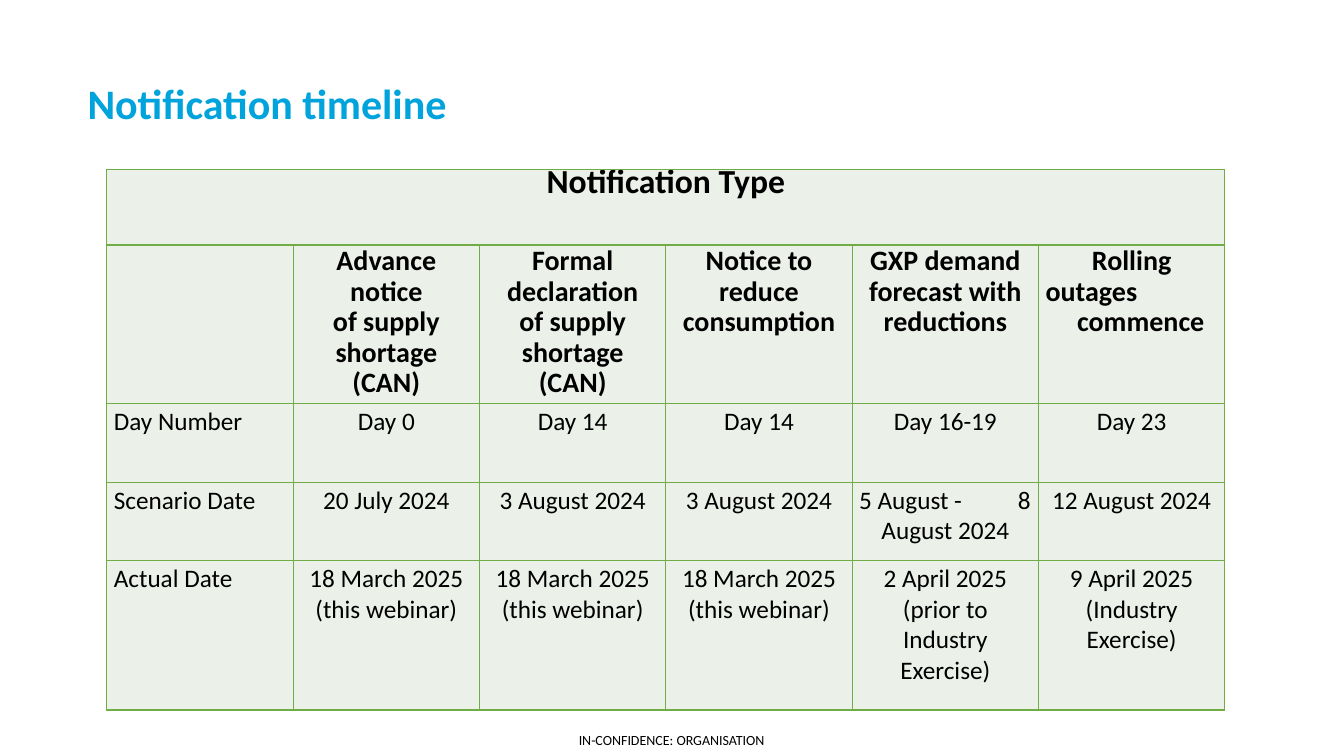
import lxml.etree
import pptx
import pptx.dml.color
import pptx.enum.text
import pptx.oxml.ns
import pptx.util

ALIGN = pptx.enum.text.PP_ALIGN
ANCHOR = pptx.enum.text.MSO_ANCHOR
WIDTH, HEIGHT = 13.33, 7.5
BLACK, BLUE, GREEN, PALE = "000000", "00A3DB", "70AD47", "EBF1E9"
SPLIT_DATE, SPLIT_HEADING = (3, 4), (1, 5)

ROWS = [
    ["Notification Type", "", "", "", "", ""],
    ["", "Advance notice\nof supply shortage (CAN)",
     "Formal declaration\nof supply shortage (CAN)",
     "Notice to reduce consumption", "GXP demand forecast with reductions",
     "Rolling\noutages\ncommence"],
    ["Day Number", "Day 0", "Day 14", "Day 14", "Day 16-19", "Day 23"],
    ["Scenario Date", "20 July 2024", "3 August 2024", "3 August 2024",
     "5 August -\t8\nAugust 2024", "12 August 2024"],
    ["Actual Date"] + ["18 March 2025\n(this webinar)"] * 3
    + ["2 April 2025 (prior to Industry Exercise)",
       "9 April 2025\n(Industry Exercise)"],
]
ROW_HEIGHTS = [0.75, 1.48, 0.78, 0.78, 1.48]
ROW_SIZES = [24, 20, 18, 18, 18]


def colour(value):
    return pptx.dml.color.RGBColor.from_string(value)


class SlideBuilder:
    """Hold the deck style and add elements to the current slide."""

    font_name = "Calibri"

    def __init__(self):
        self.deck = pptx.Presentation()
        self.deck.slide_width = pptx.util.Inches(WIDTH)
        self.deck.slide_height = pptx.util.Inches(HEIGHT)
        self.slide = self.deck.slides.add_slide(self.deck.slide_layouts[6])

    def place(self, left, top, width, height):
        across, down = self.deck.slide_width, self.deck.slide_height
        return (round(left * across), round(top * down),
                round(width * across), round(height * down))

    def style(self, para, size, shade, bold):
        para.font.name = self.font_name
        para.font.size = pptx.util.Pt(size)
        para.font.color.rgb = colour(shade)
        para.font.bold = bold

    def text(self, shares, words, size, shade, bold=False, wrap=True,
             inset=(0.1, 0.05), anchor=ANCHOR.TOP, spacing=1.0):
        box = self.slide.shapes.add_textbox(*self.place(*shares))
        frame = box.text_frame
        frame.word_wrap = wrap
        frame.vertical_anchor = anchor
        frame.margin_left = frame.margin_right = pptx.util.Inches(inset[0])
        frame.margin_top = frame.margin_bottom = pptx.util.Inches(inset[1])
        frame.text = words
        para = frame.paragraphs[0]
        para.line_spacing = spacing
        self.style(para, size, shade, bold)

    def border(self, cell):
        properties = cell._tc.get_or_add_tcPr()
        for index, side in enumerate(("lnL", "lnR", "lnT", "lnB")):
            line = lxml.etree.Element(pptx.oxml.ns.qn(f"a:{side}"), w="12700")
            fill = lxml.etree.SubElement(line, pptx.oxml.ns.qn("a:solidFill"))
            lxml.etree.SubElement(fill, pptx.oxml.ns.qn("a:srgbClr"), val=GREEN)
            properties.insert(index, line)

    def right_tab(self, para, inches):
        stops = lxml.etree.SubElement(para._p.get_or_add_pPr(),
                                      pptx.oxml.ns.qn("a:tabLst"))
        lxml.etree.SubElement(stops, pptx.oxml.ns.qn("a:tab"),
                              pos=str(pptx.util.Inches(inches)), algn="r")

    def cell(self, cell, words, size, bold, centred):
        cell.fill.solid()
        cell.fill.fore_color.rgb = colour(PALE)
        self.border(cell)
        cell.margin_left = cell.margin_right = pptx.util.Inches(0.07)
        cell.margin_top = cell.margin_bottom = pptx.util.Inches(0.03)
        cell.text_frame.text = words
        for para in cell.text_frame.paragraphs:
            para.alignment = ALIGN.CENTER if centred else ALIGN.LEFT
            para.line_spacing = pptx.util.Pt(21.8)
            if "\t" in para.text:
                self.right_tab(para, 1.7)
            self.style(para, size, BLACK, bold)

    def table(self, shares, rows, heights, sizes):
        frame = self.slide.shapes.add_table(len(rows), len(rows[0]),
                                            *self.place(*shares))
        table = frame.table
        table.first_row = table.horz_banding = False
        for row, height in zip(table.rows, heights):
            row.height = pptx.util.Inches(height)
        for r, row in enumerate(rows):
            for c, words in enumerate(row):
                self.cell(table.cell(r, c), words, sizes[r], r < 2,
                          r == 0 or c > 0)
        table.cell(0, 0).merge(table.cell(0, len(rows[0]) - 1))
        return table


def main():
    builder = SlideBuilder()
    builder.text((5.74 / WIDTH, 7.26 / HEIGHT, 1.89 / WIDTH, 0.17 / HEIGHT),
                 "IN-CONFIDENCE: ORGANISATION", 10, BLACK, wrap=False,
                 inset=(0, 0))
    builder.text((0.77 / WIDTH, 0.6 / HEIGHT, 12.04 / WIDTH, 0.72 / HEIGHT),
                 "Notification timeline", 30, BLUE, bold=True,
                 anchor=ANCHOR.BOTTOM, spacing=0.9)
    table = builder.table((1.06 / WIDTH, 1.68 / HEIGHT, 11.09 / WIDTH,
                           sum(ROW_HEIGHTS) / HEIGHT),
                          ROWS, ROW_HEIGHTS, ROW_SIZES)
    for place, line in ((SPLIT_DATE, 0), (SPLIT_HEADING, 1)):
        para = table.cell(*place).text_frame.paragraphs[line]
        para.alignment = ALIGN.LEFT
    last_line = table.cell(*SPLIT_HEADING).text_frame.paragraphs[2]
    last_line._p.get_or_add_pPr().set("marL", str(pptx.util.Inches(0.18)))
    builder.deck.save("out.pptx")


if __name__ == "__main__":
    main()
